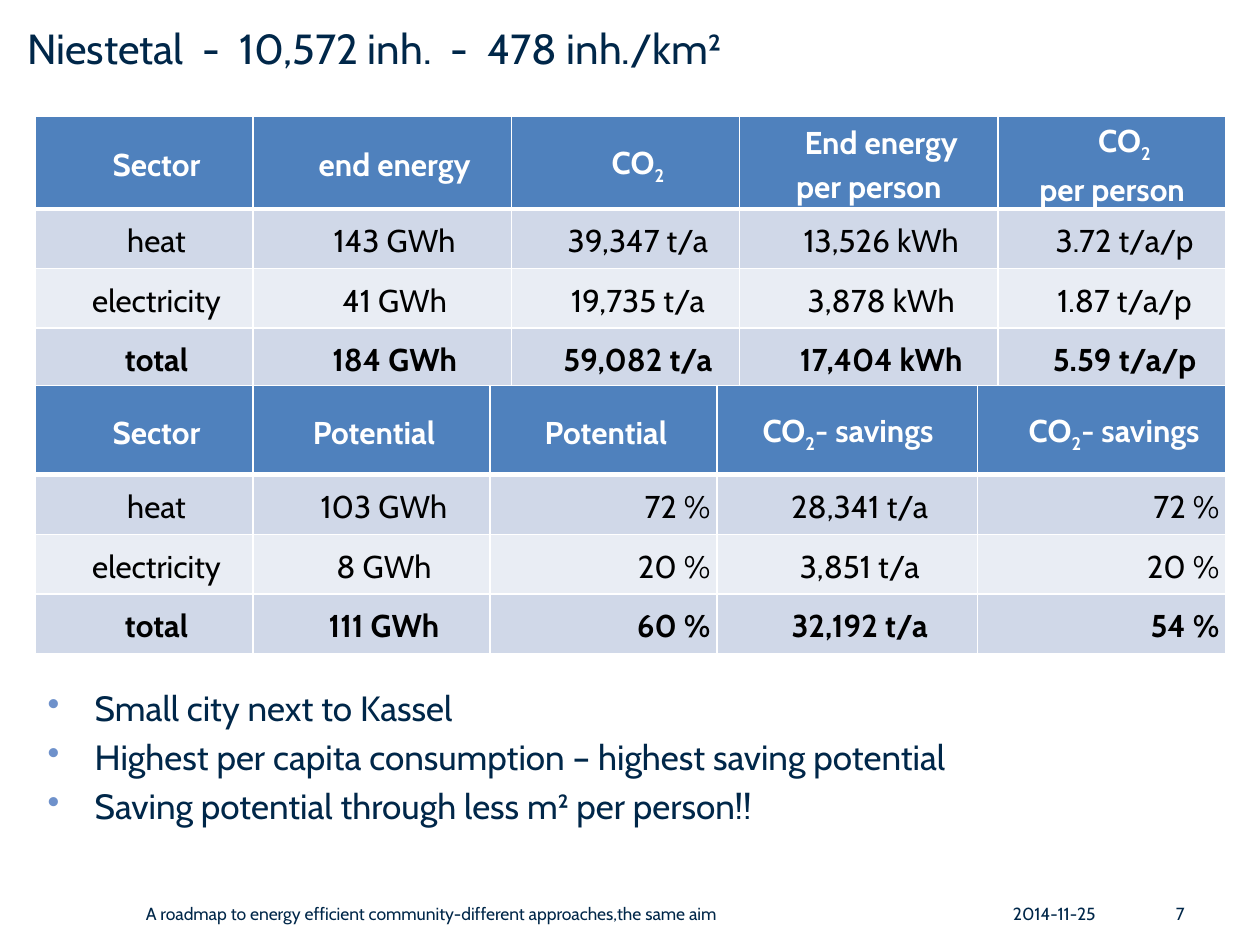
from lxml import etree
from pptx import Presentation
from pptx import util as u
from pptx.dml.color import RGBColor
from pptx.enum import text
from pptx.oxml import ns

FONT = "Cabin"
COLORS = {
    "navy": "002749", "bullet": "6E91CB", "header": "4F81BD",
    "band": "D0D8E8", "light": "E9EDF4", "white": "FFFFFF", "black": "000000",
}
LEFT, CENTER, RIGHT = text.PP_ALIGN.LEFT, text.PP_ALIGN.CENTER, text.PP_ALIGN.RIGHT


def add_run(paragraph, words, size, color, bold=False):
    run = paragraph.add_run()
    run.text = words
    run.font.name = FONT
    run.font.size = u.Pt(size)
    run.font.bold = bold
    run.font.color.rgb = RGBColor.from_string(COLORS[color])
    return run


def add_border(cell, side, width):
    """Draw one white edge; call in the order L, R, T, B and before the fill."""
    line = etree.SubElement(cell._tc.get_or_add_tcPr(), ns.qn(f"a:ln{side}"), w=str(u.Pt(width)))
    fill = etree.SubElement(line, ns.qn("a:solidFill"))
    etree.SubElement(fill, ns.qn("a:srgbClr"), val=COLORS["white"])


presentation = Presentation()
presentation.slide_width = u.Cm(25.4)
presentation.slide_height = u.Cm(19.05)
slide = presentation.slides.add_slide(presentation.slide_layouts[6])

# Title, footer and bullet list: left, top, width, height, size, align, anchor, lines
TOP, MIDDLE = text.MSO_ANCHOR.TOP, text.MSO_ANCHOR.MIDDLE
text_boxes = [
    (0.3, 0.33, 21.8, 1.6, 24, LEFT, TOP, ["Niestetal  -  10,572 inh.  -  478 inh./km²"]),
    (20.17, 17.9, 2.34, 1.02, 10, LEFT, MIDDLE, ["2014-11-25"]),
    (2.69, 17.9, 16.4, 1.02, 10, LEFT, MIDDLE,
     ["A roadmap to energy efficient community-different approaches,the same aim"]),
    (22.5, 17.9, 1.63, 1.02, 10, RIGHT, MIDDLE, ["7"]),
    (0.71, 13.72, 24, 2.79, 20, LEFT, TOP, [
        "Small city next to Kassel",
        "Highest per capita consumption – highest saving potential",
        "Saving potential through less m² per person!!",
    ]),
]
for left, top, width, height, size, align, anchor, lines in text_boxes:
    box = slide.shapes.add_textbox(u.Cm(left), u.Cm(top), u.Cm(width), u.Cm(height))
    frame = box.text_frame
    frame.word_wrap = True
    frame.vertical_anchor = anchor
    for index, line in enumerate(lines):
        paragraph = frame.add_paragraph() if index else frame.paragraphs[0]
        paragraph.alignment = align
        if index:
            paragraph.space_before = u.Pt(size * 0.2)
        if len(lines) > 1:
            properties = paragraph._p.get_or_add_pPr()
            properties.set("marL", str(u.Cm(0.95)))
            properties.set("indent", str(u.Cm(-0.95)))
            bullet_color = etree.SubElement(properties, ns.qn("a:buClr"))
            etree.SubElement(bullet_color, ns.qn("a:srgbClr"), val=COLORS["bullet"])
            etree.SubElement(properties, ns.qn("a:buChar"), char="•")
        add_run(paragraph, line, size, "navy")

# Tables: in a header, "|" encloses a subscript and a newline is a line break
tables = [
    {
        "top": 2.34, "header_height": 1.63, "columns": [4.39, 5.21, 4.6, 5.21, 4.6],
        "header_indents": [0.5] * 5, "right_columns": [],
        "rows": [
            ["Sector", "end energy", "CO|2|", "End energy\nper person", "CO|2|\nper person"],
            ["heat", "143 GWh", "39,347 t/a", "13,526 kWh", "3.72 t/a/p"],
            ["electricity", "41 GWh", "19,735 t/a", "3,878 kWh", "1.87 t/a/p"],
            ["total", "184 GWh", "59,082 t/a", "17,404 kWh", "5.59 t/a/p"],
        ],
    },
    {
        "top": 7.77, "header_height": 1.8, "columns": [4.39, 4.78, 4.57, 5.26, 5],
        "header_indents": [0.5, 0.1, 0.1, 0.03, 0.5], "right_columns": [2, 4],
        "rows": [
            ["Sector", "Potential", "Potential", "CO|2|- savings", "CO|2|- savings"],
            ["heat", "103 GWh", "72 %", "28,341 t/a", "72 %"],
            ["electricity", "8 GWh", "20 %", "3,851 t/a", "20 %"],
            ["total", "111 GWh", "60 %", "32,192 t/a", "54 %"],
        ],
    },
]
ROW_HEIGHT = 1.2
row_fills = ["header", "band", "light", "band"]
for data in tables:
    rows, columns = data["rows"], data["columns"]
    heights = [data["header_height"]] + [ROW_HEIGHT] * (len(rows) - 1)
    table = slide.shapes.add_table(
        len(rows), len(columns), u.Cm(0.71), u.Cm(data["top"]),
        u.Cm(sum(columns)), u.Cm(sum(heights))).table
    for column, width in zip(table.columns, columns):
        column.width = u.Cm(width)
    for row_index, row in enumerate(rows):
        table.rows[row_index].height = u.Cm(heights[row_index])
        is_header = row_index == 0
        for column_index, words in enumerate(row):
            cell = table.cell(row_index, column_index)
            cell.margin_left = cell.margin_right = u.Cm(0.13)
            cell.margin_top = cell.margin_bottom = 0
            cell.vertical_anchor = MIDDLE
            edges = {"L": 1, "R": 1, "T": 3 if row_index == 1 else 1, "B": 3 if is_header else 1}
            for side, width in edges.items():
                add_border(cell, side, width)
            cell.fill.solid()
            cell.fill.fore_color.rgb = RGBColor.from_string(COLORS[row_fills[row_index]])

            paragraph = cell.text_frame.paragraphs[0]
            is_right = not is_header and column_index in data["right_columns"]
            paragraph.alignment = RIGHT if is_right else CENTER
            paragraph.line_spacing = 1.15
            indent = data["header_indents"][column_index] if is_header else 0.5
            paragraph._p.get_or_add_pPr().set("indent", str(u.Cm(indent)))
            color = "white" if is_header else "black"
            bold = is_header or row_index == len(rows) - 1
            for line_index, line in enumerate(words.split("\n")):
                if line_index:
                    paragraph.add_line_break()
                for piece_index, piece in enumerate(line.split("|")):
                    if piece:
                        run = add_run(paragraph, piece, 18, color, bold)
                        if piece_index % 2:
                            run._r.get_or_add_rPr().set("baseline", "-25000")

presentation.save("out.pptx")
